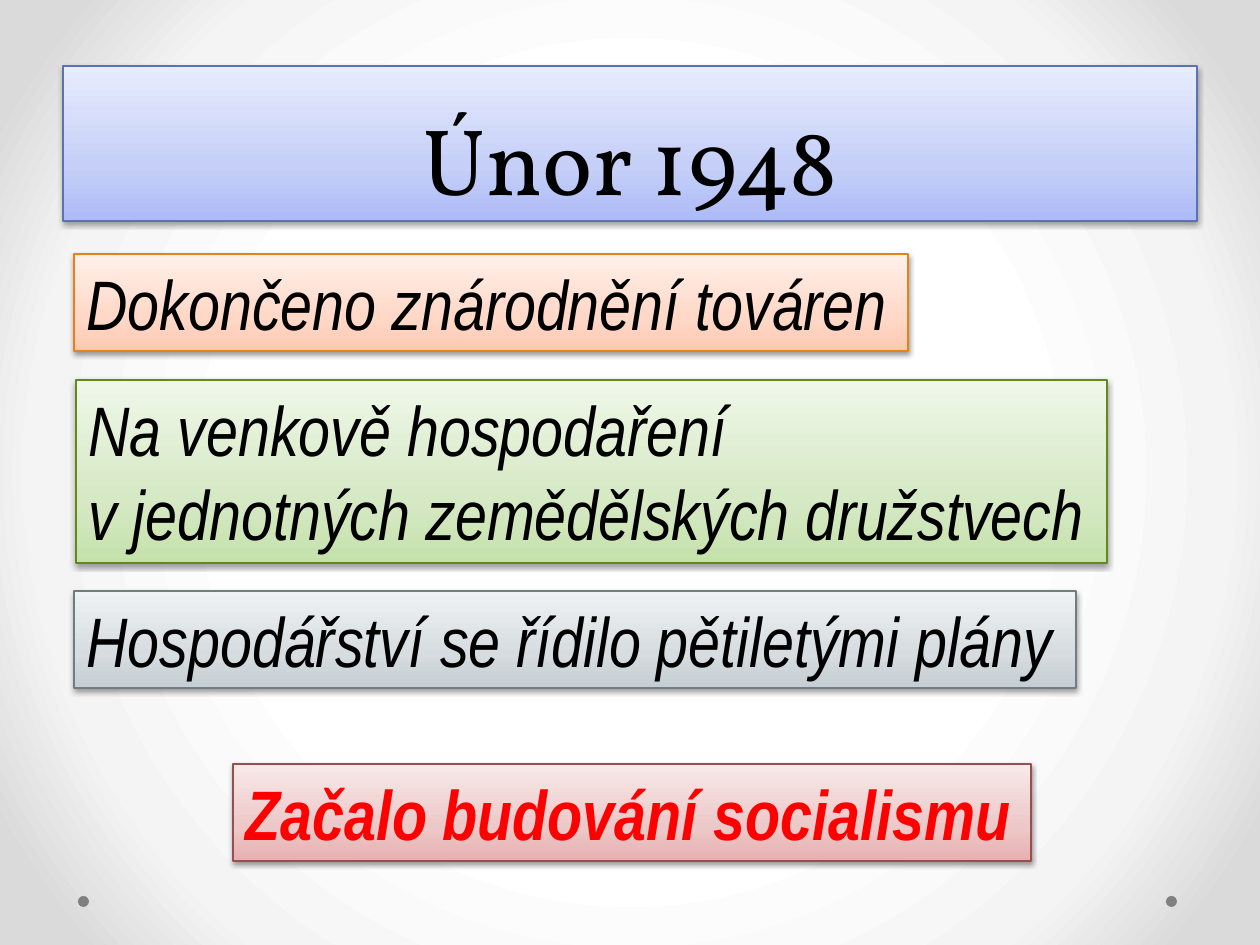
from lxml import etree
from pptx import Presentation
from pptx import util as u
from pptx.dml.color import RGBColor
from pptx.enum import shapes, text
from pptx.oxml import ns

PX = 914400 / 126
BLACK = RGBColor(0x00, 0x00, 0x00)
RED = RGBColor(0xFF, 0x00, 0x00)
GRAY = RGBColor(0x80, 0x80, 0x80)
WHITE = RGBColor(0xFF, 0xFF, 0xFF)
MIST = RGBColor(0xF4, 0xF4, 0xF4)
SILVER = RGBColor(0xDA, 0xDA, 0xDA)


def palette(*codes):
    return [RGBColor.from_string(code) for code in codes]


BLUE = palette("ADBBF6", "C5CFF8", "E8ECFD", "5C72B2")
ORANGE = palette("FFC9B1", "FFD8C8", "FFF0EA", "E6811C")
GREEN = palette("C5E1AB", "D6E9C5", "EFF7E9", "62891C")
SLATE = palette("C5CED2", "D6DCDF", "EFF2F3", "727D82")
ROSE = palette("E8B0B0", "EDC8C8", "F9E9E9", "9A4E4E")


def px(n):
    return u.Emu(round(n * PX))


def sub(parent, tag, **attrs):
    return etree.SubElement(parent, ns.qn(tag), {k: str(v) for k, v in attrs.items()})


def set_stops(grad, stops):
    gs_list = grad.find(ns.qn("a:gsLst"))
    for gs in list(gs_list):
        gs_list.remove(gs)
    for pos, color in stops:
        sub(sub(gs_list, "a:gs", pos=pos * 1000), "a:srgbClr", val=color)


def set_background(s):
    s.background.fill.gradient()
    grad = s.element.find(".//" + ns.qn("a:gradFill"))
    set_stops(grad, [(50, WHITE), (76, MIST), (92, SILVER)])
    grad.remove(grad.find(ns.qn("a:lin")))
    path = sub(grad, "a:path", path="circle")
    sub(path, "a:fillToRect", l=50000, t=50000, r=50000, b=50000)


def style_panel(sp, colors):
    *shades, edge = colors
    sp.fill.gradient()
    sp.fill.gradient_angle = 90
    props = sp.element.spPr
    set_stops(props.find(ns.qn("a:gradFill")), zip((0, 35, 100), shades))
    sp.line.color.rgb = edge
    sp.line.width = u.Pt(0.75)
    sp.shadow.inherit = False
    shadow = sub(props.find(ns.qn("a:effectLst")), "a:outerShdw", blurRad=40000,
                 dist=20000, dir=5400000, rotWithShape=0)
    sub(sub(shadow, "a:srgbClr", val=BLACK), "a:alpha", val=38000)


def add_run(p, words, font, size, color, bold=False, italic=False):
    r = p.add_run()
    r.text = words
    r.font.name = font
    r.font.size = u.Pt(size)
    r.font.color.rgb = color
    r.font.bold = bold
    r.font.italic = italic


def add_title(s, words, x, y, w, h):
    sp = s.shapes.title
    sp.left, sp.top, sp.width, sp.height = map(px, (x, y, w, h))
    style_panel(sp, BLUE)
    tf = sp.text_frame
    tf.auto_size = text.MSO_AUTO_SIZE.NONE
    tf.vertical_anchor = text.MSO_ANCHOR.BOTTOM
    p = tf.paragraphs[0]
    p.alignment = text.PP_ALIGN.CENTER
    p.line_spacing = u.Pt(58)
    add_run(p, words, "Vollkorn", 54, BLACK)


def add_panel(s, lines, x, y, w, h, colors, color=BLACK, bold=False):
    sp = s.shapes.add_textbox(px(x), px(y), px(w), px(h))
    style_panel(sp, colors)
    tf = sp.text_frame
    tf.word_wrap = False
    tf.auto_size = text.MSO_AUTO_SIZE.SHAPE_TO_FIT_TEXT
    for i, line in enumerate(lines):
        p = tf.add_paragraph() if i else tf.paragraphs[0]
        add_run(p, line, "Arial Narrow", 40, color, bold, italic=True)


def add_dot(s, x, y, size):
    sp = s.shapes.add_shape(shapes.MSO_SHAPE.OVAL, px(x), px(y), px(size), px(size))
    sp.fill.solid()
    sp.fill.fore_color.rgb = GRAY
    sp.line.fill.background()
    sp.shadow.inherit = False


def main():
    prs = Presentation()
    prs.slide_width, prs.slide_height = px(1260), px(945)
    s = prs.slides.add_slide(prs.slide_layouts[5])
    set_background(s)
    for x in (1166, 78):
        add_dot(s, x, 896, 11)
    add_title(s, "Únor 1948", 63, 66, 1134, 155)
    add_panel(s, ["Dokončeno znárodnění továren"], 74, 254, 834, 97, ORANGE)
    add_panel(s, ["Na venkově hospodaření", "v jednotných zemědělských družstvech"],
              76, 380, 1031, 183, GREEN)
    add_panel(s, ["Hospodářství se řídilo pětiletými plány"], 74, 591, 1002, 97, SLATE)
    add_panel(s, ["Začalo budování socialismu"], 233, 764, 798, 97, ROSE, RED, True)
    prs.save("out.pptx")


if __name__ == "__main__":
    main()
